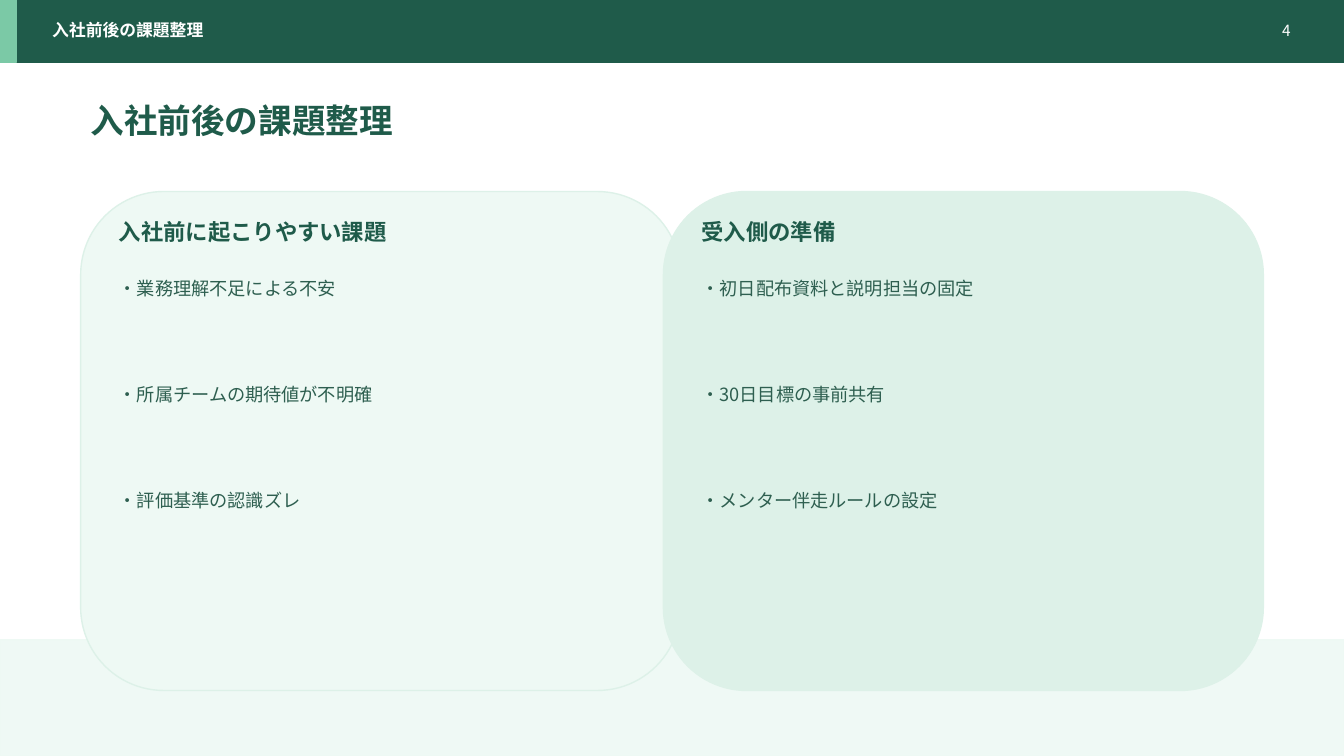
from lxml import etree
from pptx import Presentation
from pptx.dml.color import RGBColor
from pptx.enum.shapes import MSO_SHAPE
from pptx.enum.text import MSO_ANCHOR, PP_ALIGN
from pptx.oxml.ns import qn
from pptx.util import Inches, Pt

RECT, ROUND = MSO_SHAPE.RECTANGLE, MSO_SHAPE.ROUNDED_RECTANGLE
TOP, MID = MSO_ANCHOR.TOP, MSO_ANCHOR.MIDDLE
LEFT, RIGHT = PP_ALIGN.LEFT, PP_ALIGN.RIGHT

GREEN = RGBColor(0x1F, 0x5B, 0x4A)
MINT = RGBColor(0x7B, 0xC9, 0xA6)
PALE = RGBColor(0xEE, 0xF9, 0xF4)
SOFT = RGBColor(0xDD, 0xF1, 0xE8)
INK = RGBColor(0x2E, 0x5F, 0x50)
WHITE = RGBColor(0xFF, 0xFF, 0xFF)

FACE = "Noto Sans CJK JP"
WIDE, HIGH = 13.33, 7.5
BAR = 0.62      # height of the header bar
FOOT = 1.15     # height of the footer band
EDGE = 0.8      # left edge of the content
STEP = 5.78     # from one card to the next
PAD = 0.28      # from card edge to its text
CARD = 1.9      # top of the cards
LIST = 2.7      # top of the first point
PITCH = 1.05    # from one point to the next

HEAD = {"size": Pt(12), "color": WHITE, "bold": True}
PAGE = {"size": Pt(11), "color": WHITE}
TITLE = {"size": Pt(24), "color": GREEN, "bold": True}
LABEL = {"size": Pt(16), "color": GREEN, "bold": True}
POINT = {"size": Pt(13), "color": INK}

TOPIC = "入社前後の課題整理"
CARDS = [
    ("入社前に起こりやすい課題", PALE,
     ["・業務理解不足による不安", "・所属チームの期待値が不明確", "・評価基準の認識ズレ"]),
    ("受入側の準備", SOFT,
     ["・初日配布資料と説明担当の固定", "・30日目標の事前共有", "・メンター伴走ルールの設定"]),
]


def add_box(slide, kind, place, fill, line, alpha=None):
    box = slide.shapes.add_shape(kind, *map(Inches, place))
    box.shadow.inherit = False
    box.fill.solid()
    box.fill.fore_color.rgb = fill
    box.line.color.rgb = line
    box.line.width = Pt(1)
    if alpha is not None:
        tint = box.element.spPr.find(qn("a:solidFill"))[0]
        etree.SubElement(tint, qn("a:alpha"), val=str(alpha * 1000))


def add_text(slide, place, words, style, anchor=MID, align=LEFT):
    frame = slide.shapes.add_textbox(*map(Inches, place)).text_frame
    frame.word_wrap = True
    frame.vertical_anchor = anchor
    para = frame.paragraphs[0]
    para.alignment = align
    run = para.add_run()
    run.text = words
    for key, value in style.items():
        if key == "color":
            run.font.color.rgb = value
        else:
            setattr(run.font, key, value)
    run.font.name = FACE
    # Japanese glyphs take the East Asian typeface
    etree.SubElement(run.font._element, qn("a:ea"), typeface=FACE)


def add_card(slide, left, fill):
    add_box(slide, ROUND, (left, CARD, 5.95, 4.95), fill, SOFT)


def add_points(slide, left, label, points):
    add_text(slide, (left, CARD + 0.25, 5.2, 0.3), label, LABEL)
    for row, point in enumerate(points):
        place = (left, LIST + row * PITCH, 5.25, 0.82)
        add_text(slide, place, point, POINT, TOP)


def main():
    deck = Presentation()
    deck.slide_width, deck.slide_height = Inches(WIDE), Inches(HIGH)
    slide = deck.slides.add_slide(deck.slide_layouts[6])

    # Footer band and header bar
    add_box(slide, RECT, (0, HIGH - FOOT, WIDE, FOOT), PALE, PALE, 90)
    add_box(slide, RECT, (0, 0, WIDE, BAR), GREEN, GREEN)
    add_box(slide, RECT, (0, 0, 0.16, BAR), MINT, MINT)
    add_text(slide, (0.42, 0.17, 8.8, 0.26), TOPIC, HEAD)
    add_text(slide, (12.15, 0.17, 0.75, 0.26), "4", PAGE, align=RIGHT)

    # Title
    add_text(slide, (EDGE, 0.95, 11.4, 0.48), TOPIC, TITLE)

    # Two cards, the second over the first
    for col, (label, fill, points) in enumerate(CARDS):
        left = EDGE + col * STEP
        add_card(slide, left, fill)
        add_points(slide, left + PAD, label, points)

    deck.save("out.pptx")


if __name__ == "__main__":
    main()
